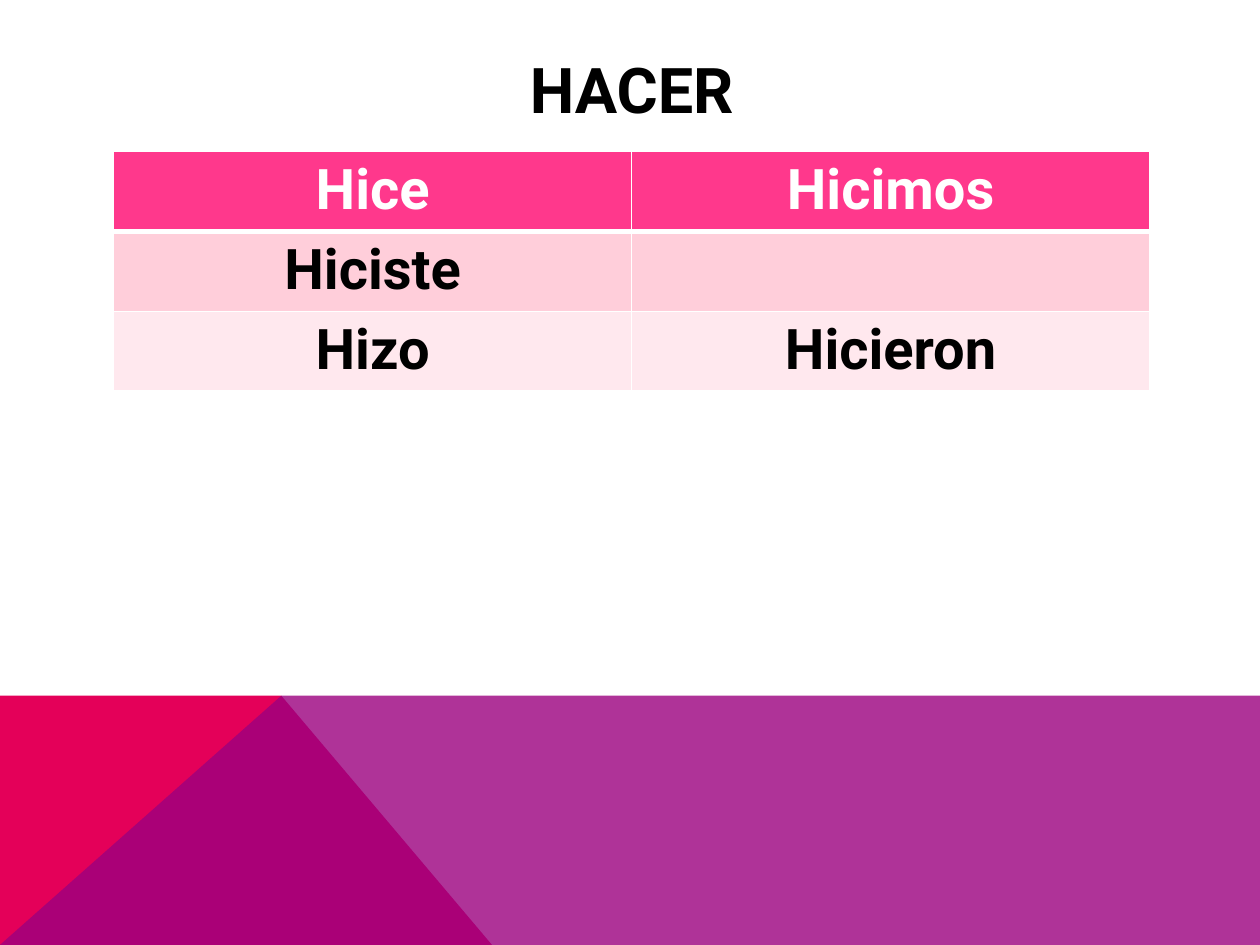
from dataclasses import dataclass

import pptx
import pptx.dml.color
import pptx.enum.text
import pptx.oxml
import pptx.oxml.ns
import pptx.util
from pptx.util import Pt


@dataclass(frozen=True)
class Theme:
    font: str = "Roboto"
    title_size: float = 36
    cell_size: float = 32
    dark: str = "000000"
    light: str = "FFFFFF"
    row_fills: tuple = ("FF388C", "FFCEDA", "FFE8EE")
    red: str = "E40059"
    purple: str = "9C007F"


THEME = Theme()
CONJUGATIONS = [("Hice", "Hicimos"), ("Hiciste", ""), ("Hizo", "Hicieron")]


def rgb(value):
    return pptx.dml.color.RGBColor.from_string(value)


def add_centred_run(paragraph, text, size, color):
    paragraph.alignment = pptx.enum.text.PP_ALIGN.CENTER
    run = paragraph.add_run()
    run.text = text
    run.font.name = THEME.font
    run.font.size = Pt(size)
    run.font.bold = True
    run.font.color.rgb = rgb(color)


def add_polygon(slide, points, color, opacity=100):
    builder = slide.shapes.build_freeform(Pt(points[0][0]), Pt(points[0][1]))
    builder.add_line_segments([(Pt(x), Pt(y)) for x, y in points[1:]], close=True)
    shape = builder.convert_to_shape()
    shape.shadow.inherit = False
    shape.line.fill.background()
    shape.fill.solid()
    shape.fill.fore_color.rgb = rgb(color)
    if opacity < 100:
        color_element = shape.fill._xPr.find(".//" + pptx.oxml.ns.qn("a:srgbClr"))
        color_element.append(pptx.oxml.parse_xml(
            f'<a:alpha {pptx.oxml.ns.nsdecls("a")} val="{opacity * 1000}"/>'))


def add_footer_band(slide, left, top, width, height):
    """Red wedge under a translucent purple band that share one peak."""
    right, bottom = left + width, top + height
    peak = (left + 160.8, top)
    add_polygon(slide, [(left, bottom), (left, top), peak, (left + 281.2, bottom)], THEME.red)
    add_polygon(slide, [(left, bottom), peak, (right, top), (right, bottom)],
                THEME.purple, opacity=80)


def add_title(slide, left, top, width, height, text):
    text_frame = slide.shapes.add_textbox(Pt(left), Pt(top), Pt(width), Pt(height)).text_frame
    text_frame.word_wrap = True
    text_frame.vertical_anchor = pptx.enum.text.MSO_ANCHOR.MIDDLE
    add_centred_run(text_frame.paragraphs[0], text, THEME.title_size, THEME.dark)


def set_cell_borders(cell, bottom_width):
    """Insert the lines first, since the schema puts them before the fill."""
    properties = cell._tc.get_or_add_tcPr()
    widths = {"lnL": 1, "lnR": 1, "lnT": 1, "lnB": bottom_width}
    for position, (side, width) in enumerate(widths.items()):
        properties.insert(position, pptx.oxml.parse_xml(
            f'<a:{side} {pptx.oxml.ns.nsdecls("a")} w="{Pt(width)}"><a:solidFill>'
            f'<a:srgbClr val="{THEME.light}"/></a:solidFill></a:{side}>'))


def add_conjugation_table(slide, left, top, width, height, rows):
    table = slide.shapes.add_table(len(rows), len(rows[0]), Pt(left), Pt(top),
                                   Pt(width), Pt(height)).table
    for row_index, row in enumerate(rows):
        is_header = row_index == 0
        for column_index, text in enumerate(row):
            cell = table.cell(row_index, column_index)
            cell.fill.solid()
            cell.fill.fore_color.rgb = rgb(THEME.row_fills[row_index])
            if row_index == 1:
                top_line = 3
            set_cell_borders(cell, bottom_width=3 if is_header else 1)
            if row_index == 1:
                cell._tc.tcPr.find(pptx.oxml.ns.qn("a:lnT")).set("w", str(Pt(top_line)))
            if text:
                add_centred_run(cell.text_frame.paragraphs[0], text, THEME.cell_size,
                                THEME.light if is_header else THEME.dark)


def main():
    presentation = pptx.Presentation()
    presentation.slide_width, presentation.slide_height = Pt(720), Pt(540)
    slide = presentation.slides.add_slide(presentation.slide_layouts[6])
    add_footer_band(slide, 0, 397.6, 720, 142.4)
    add_title(slide, 65, 29, 592, 43, "HACER")
    add_conjugation_table(slide, 65, 86.6, 592, 133.8, CONJUGATIONS)
    presentation.save("out.pptx")


if __name__ == "__main__":
    main()
